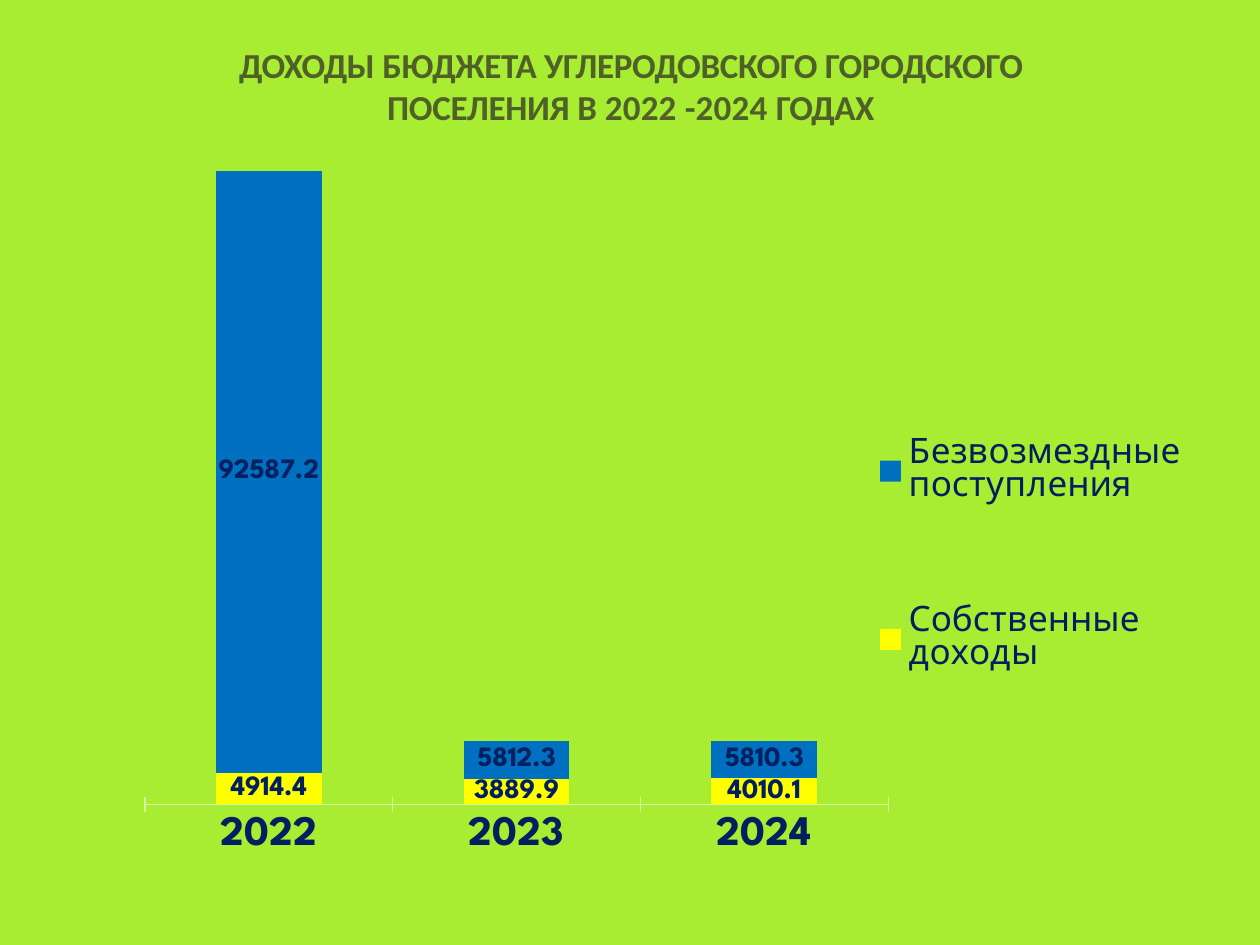
from pptx import Presentation
from pptx.chart.data import CategoryChartData
from pptx.dml.color import RGBColor
from pptx.enum.chart import (XL_CHART_TYPE, XL_LABEL_POSITION as LABEL_POS,
                             XL_LEGEND_POSITION as LEGEND_POS, XL_TICK_MARK as TICK)
from pptx.enum.shapes import MSO_SHAPE
from pptx.enum.text import PP_ALIGN
from pptx.oxml import parse_xml
from pptx.oxml.ns import nsdecls
from pptx.util import Cm, Pt

NAVY = "002060"
TITLE = [("ДОХОДЫ ", -30), ("БЮДЖЕТА УГЛЕРОДОВСКОГО ГОРОДСКОГО ПОСЕЛЕНИЯ ", -20),
         ("В ", 0), ("2022 -2024 ", 10), ("ГОДАХ", -40)]
YEARS = ["2022", "2023", "2024"]
SERIES = [("Собственные доходы", [4914.4, 3889.9, 4010.1], "FFFF00"),
          ("Безвозмездные поступления", [92587.2, 5812.3, 5810.3], "0070C0")]


def color(value):
    """Turn a hex string into a colour."""
    return RGBColor.from_string(value)


def style_font(font, size, value, bold=False, name=None):
    """Set the size, colour, weight and typeface of a font."""
    font.size, font.bold = Pt(size), bold
    font.color.rgb = color(value)
    if name:
        font.name = name


def add_backdrop(s, x, y, w, h):
    """Fill the box with a plain green rectangle."""
    sp = s.shapes.add_shape(MSO_SHAPE.RECTANGLE, x, y, w, h)
    sp.shadow.inherit = False
    sp.fill.solid()
    sp.fill.fore_color.rgb = color("A8ED31")
    sp.line.fill.background()


def add_title(s, x, y, w, h):
    """Write the centred heading with its letter spacing."""
    tf = s.shapes.add_textbox(x, y, w, h).text_frame
    tf.word_wrap = True
    tf.margin_left = tf.margin_right = tf.margin_bottom = 0
    tf.margin_top = Cm(0.03)
    p = tf.paragraphs[0]
    p.alignment = PP_ALIGN.CENTER
    style_font(p.font, 20, "4F6128", True, "Calibri")
    for text, spacing in TITLE:
        r = p.add_run()
        r.text = text
        r.font._element.set("spc", str(spacing))


def manual_layout(x, y, w, h, inner=False):
    """Build a chart layout element from fractions of the chart box."""
    target = '<c:layoutTarget val="inner"/>' if inner else ""
    modes = '<c:xMode val="edge"/><c:yMode val="edge"/>'
    sizes = "".join(f'<c:{tag} val="{v}"/>' for tag, v in zip("xywh", (x, y, w, h)))
    return parse_xml(f'<c:layout {nsdecls("c")}><c:manualLayout>{target}{modes}{sizes}'
                     '</c:manualLayout></c:layout>')


def place(parent, layout, index):
    """Put a layout element in its parent, replacing any old one."""
    for old in parent.xpath("./c:layout"):
        parent.remove(old)
    parent.insert(index, layout)


def add_income_chart(s, x, y, w, h):
    """Draw the stacked columns of income by year."""
    data = CategoryChartData(number_format="0.0")
    data.categories = YEARS
    for name, values, _ in SERIES:
        data.add_series(name, values)
    chart = s.shapes.add_chart(XL_CHART_TYPE.COLUMN_STACKED, x, y, w, h, data).chart
    chart.has_title = False
    style_font(chart.font, 9.7, "FFFFFF", name="League Spartan")

    plot = chart.plots[0]
    plot.gap_width, plot.overlap = 134, 100
    plot.vary_by_categories = False
    for series, (_, _, value) in zip(plot.series, SERIES):
        series.format.fill.solid()
        series.format.fill.fore_color.rgb = color(value)
        labels = series.data_labels
        labels.show_value = True
        labels.position = LABEL_POS.CENTER
        style_font(labels.font, 16, NAVY, True)

    axis = chart.category_axis
    axis.major_tick_mark = TICK.CROSS
    axis.format.line.color.rgb = color("D9F3A0")
    style_font(axis.tick_labels.font, 24, NAVY, True)
    values = chart.value_axis
    values.visible = values.has_major_gridlines = False
    values.minimum_scale, values.maximum_scale = 0, 97800

    chart.has_legend = True
    legend = chart.legend
    legend.position = LEGEND_POS.RIGHT
    legend.include_in_layout = False
    style_font(legend.font, 20, NAVY)
    place(legend._element, manual_layout(0.7, 0.27, 0.3, 0.59), 1)
    area = chart._chartSpace.xpath("./c:chart/c:plotArea")[0]
    place(area, manual_layout(0.046, 0.046, 0.675, 0.854, True), 0)


def main():
    """Build the slide and save it."""
    prs = Presentation()
    prs.slide_width, prs.slide_height = Cm(25.4), Cm(19.05)
    s = prs.slides.add_slide(prs.slide_layouts[6])
    add_backdrop(s, 0, 0, prs.slide_width, prs.slide_height)
    add_title(s, Cm(3.48), Cm(0.84), Cm(18.47), Cm(1.75))
    add_income_chart(s, Cm(1.9), Cm(2.72), Cm(22.2), Cm(15))
    prs.save("out.pptx")


if __name__ == "__main__":
    main()
